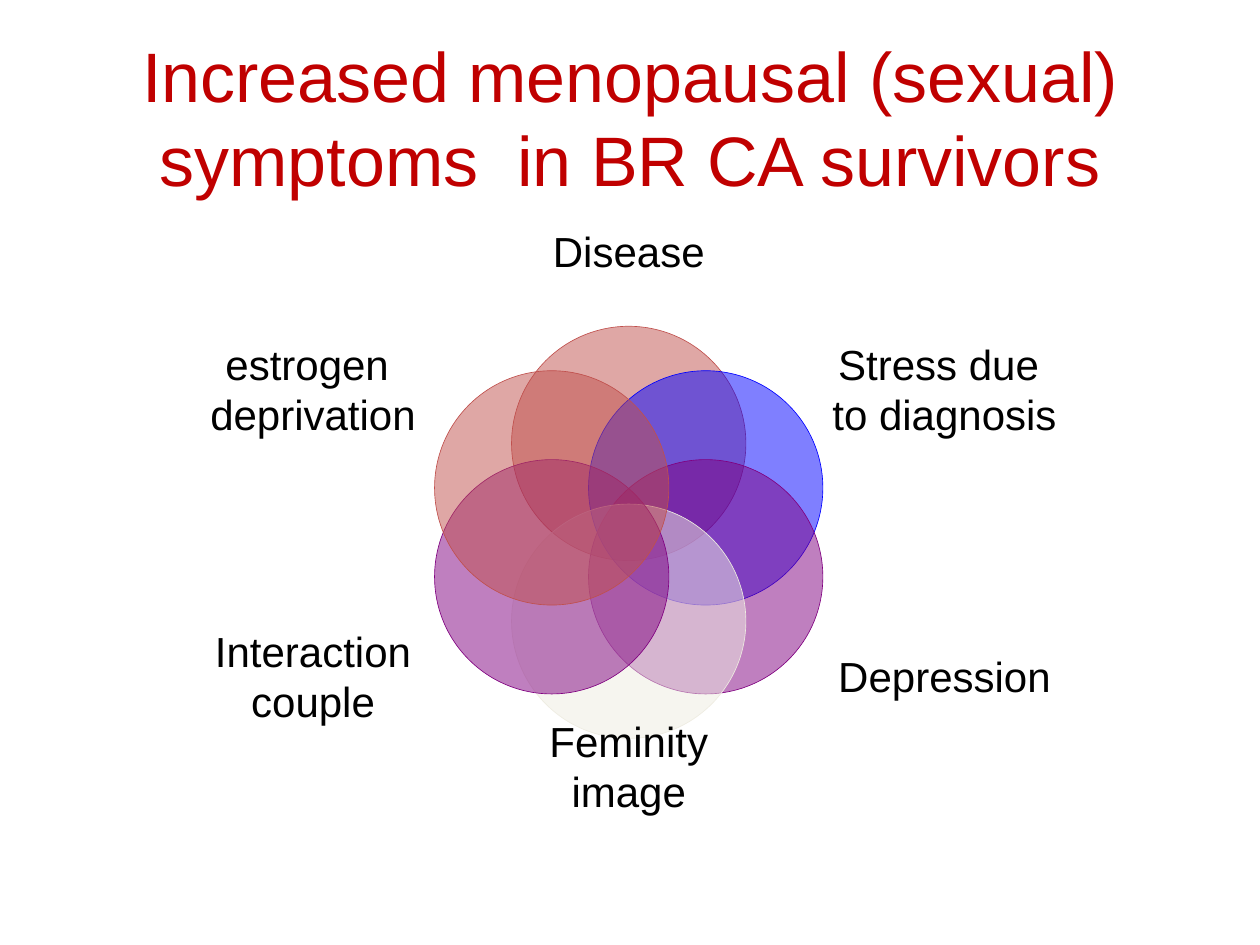
import math
from pptx import Presentation, util as u
from pptx.dml.color import RGBColor
from pptx.enum import shapes, text
from pptx.oxml import parse_xml
from pptx.oxml.ns import nsdecls

# Content: label lines, colour, label centre relative to the ring centre
TITLE = "Increased menopausal (sexual) symptoms  in BR CA survivors"
FACTORS = [  # clockwise from the top
    (["Disease"], "red", (0, -161.2)),
    (["Stress due ", "to diagnosis"], "blue", (180.4, -82)),
    (["Depression"], "purple", (180.4, 82)),
    (["Feminity image"], "cream", (0, 133.5)),
    (["Interaction couple"], "purple", (-180.4, 82)),
    (["estrogen ", "deprivation"], "red", (-180.4, -82)),
]

THEME = {
    "font": "Arial", "title_size": 40, "label_size": 24,
    "title": "C00000", "text": "000000",
    "red": "C0504D", "blue": "0000FF", "purple": "800080", "cream": "EEECE1",
    "opacity": 50, "outline": 0.37,
}

# Geometry in points
CENTRE_X, CENTRE_Y = 359.3, 304.2
RING_RADIUS = 50.8
DIAMETER = 133.9
LABEL_W, LABEL_H = 133.9, 33.1


def rgb(key):
    return RGBColor.from_string(THEME[key])


def add_text(slide, lines, left, top, width, height, *, size, color,
             wrap=True, inset=(7.2, 3.6)):
    box = slide.shapes.add_textbox(u.Pt(left), u.Pt(top), u.Pt(width), u.Pt(height))
    frame = box.text_frame
    frame.word_wrap = wrap
    frame.vertical_anchor = text.MSO_ANCHOR.MIDDLE
    frame.margin_left = frame.margin_right = u.Pt(inset[0])
    frame.margin_top = frame.margin_bottom = u.Pt(inset[1])
    for i, line in enumerate(lines):
        paragraph = frame.add_paragraph() if i else frame.paragraphs[0]
        paragraph.alignment = text.PP_ALIGN.CENTER
        run = paragraph.add_run()
        run.text = line
        run.font.name = THEME["font"]
        run.font.size = u.Pt(THEME[size])
        run.font.color.rgb = rgb(color)


def add_circle(slide, x, y, color):
    circle = slide.shapes.add_shape(
        shapes.MSO_SHAPE.OVAL, u.Pt(x - DIAMETER / 2), u.Pt(y - DIAMETER / 2),
        u.Pt(DIAMETER), u.Pt(DIAMETER))
    circle.shadow.inherit = False
    circle.fill.solid()
    circle.fill.fore_color.rgb = rgb(color)
    # Transparent fill
    fill_color = circle.fill._xPr.find(".//{*}solidFill/{*}srgbClr")
    fill_color.append(parse_xml(
        f'<a:alpha {nsdecls("a")} val="{THEME["opacity"] * 1000}"/>'))
    circle.line.color.rgb = rgb(color)
    circle.line.width = u.Pt(THEME["outline"])


def main():
    deck = Presentation()
    deck.slide_width, deck.slide_height = u.Pt(720), u.Pt(540)
    slide = deck.slides.add_slide(deck.slide_layouts[6])

    # Title
    add_text(slide, [TITLE], 36, 21.6, 648, 90, size="title_size", color="title")

    # Ring of overlapping circles, each with its label
    for i, (lines, color, (dx, dy)) in enumerate(FACTORS):
        angle = 2 * math.pi * i / len(FACTORS)
        add_circle(slide, CENTRE_X + RING_RADIUS * math.sin(angle),
                   CENTRE_Y - RING_RADIUS * math.cos(angle), color)
        add_text(slide, lines, CENTRE_X + dx - LABEL_W / 2,
                 CENTRE_Y + dy - LABEL_H / 2, LABEL_W, LABEL_H,
                 size="label_size", color="text", wrap=False, inset=(0, 0))

    deck.save("out.pptx")


if __name__ == "__main__":
    main()
